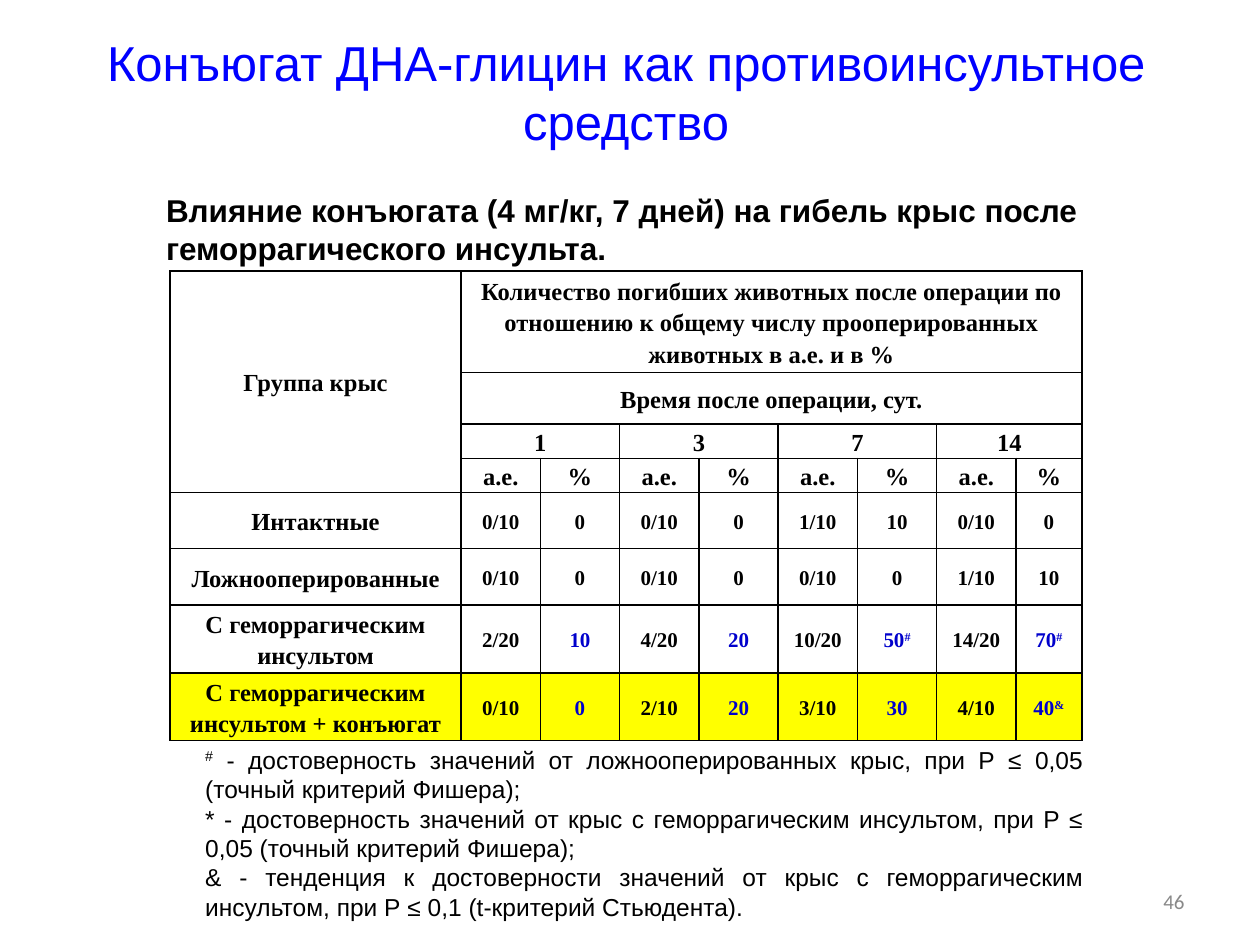
from pptx import Presentation
from pptx.util import Pt
from pptx.dml.color import RGBColor
from pptx.enum.shapes import MSO_SHAPE as Shape
from pptx.enum.text import PP_ALIGN as Align, MSO_ANCHOR as Anchor
from pptx.oxml import parse_xml
from pptx.oxml.ns import nsdecls

BLACK, BLUE, NAVY, GREY = "000000", "0000FF", "0000CC", "898989"
WHITE, YELLOW = "FFFFFF", "FFFF00"
SERIF = "Times New Roman"


def write(frame, text, size=14, font="Arial", color=BLACK, bold=False,
          align=Align.LEFT, space=None, anchor=Anchor.TOP):
    """Fill a frame, one paragraph a line; ^marks^ are superscript."""
    frame.word_wrap = True
    frame.vertical_anchor = anchor
    for i, line in enumerate(text.split("\n")):
        para = frame.add_paragraph() if i else frame.paragraphs[0]
        para.alignment = align
        if space:
            para.line_spacing = space
        for j, part in enumerate(line.split("^")):
            if not part:
                continue
            run = para.add_run()
            run.text = part
            run.font.size = Pt(size)
            run.font.name = font
            run.font.bold = bold
            run.font.color.rgb = RGBColor.from_string(color)
            if j % 2:
                run.font._element.set("baseline", "30000")


def frame_cell(cell, fill):
    """Draw thin black borders, then the fill."""
    props = cell._tc.get_or_add_tcPr()
    for side in "LRTB":
        props.append(parse_xml(
            f'<a:ln{side} {nsdecls("a")} w="12700"><a:solidFill>'
            f'<a:srgbClr val="{BLACK}"/></a:solidFill></a:ln{side}>'))
    cell.fill.solid()
    cell.fill.fore_color.rgb = RGBColor.from_string(fill)
    cell.margin_left = cell.margin_right = Pt(5)
    cell.margin_top = cell.margin_bottom = 0


deck = Presentation()
deck.slide_width, deck.slide_height = Pt(720), Pt(540)
slide = deck.slides.add_slide(deck.slide_layouts[6])
shapes = slide.shapes

# Page number and title
page = shapes.add_textbox(Pt(516), Pt(500.5), Pt(168), Pt(28.75))
write(page.text_frame, "46", size=12, font="Calibri", color=GREY,
      align=Align.RIGHT, anchor=Anchor.MIDDLE)

title = shapes.add_shape(Shape.RECTANGLE, Pt(49.5), Pt(15), Pt(616.5), Pt(75))
title.shadow.inherit = False
title.fill.solid()
title.fill.fore_color.rgb = RGBColor.from_string(WHITE)
title.line.fill.background()
write(title.text_frame, "Конъюгат ДНА-глицин как противоинсультное средство",
      size=28, color=BLUE, align=Align.CENTER)

# Table: (row, column, rows spanned, columns spanned, text)
heads = [
    (0, 0, 4, 1, "Группа крыс"),
    (0, 1, 1, 8, "Количество погибших животных после операции по отношению "
                 "к общему числу прооперированных животных в а.е. и в %"),
    (1, 1, 1, 8, "Время после операции, сут."),
]
for i, day in enumerate(["1", "3", "7", "14"]):
    col = 1 + 2 * i
    heads += [(2, col, 1, 2, day), (3, col, 1, 1, "а.е."),
              (3, col + 1, 1, 1, "%")]

groups = [
    ("Интактные", "0/10 0 0/10 0 1/10 10 0/10 0"),
    ("Ложнооперированные", "0/10 0 0/10 0 0/10 0 1/10 10"),
    ("С геморрагическим инсультом",
     "2/20 10 4/20 20 10/20 50^#^ 14/20 70^#^"),
    ("С геморрагическим инсультом + конъюгат",
     "0/10 0 2/10 20 3/10 30 4/10 40^&^"),
]
widths = [166.3] + [45.3] * 7 + [37.7]
heights = [58, 29.6, 19.5, 19.5, 32.2, 32.2, 38.8, 38.8]

grid = shapes.add_table(len(heights), len(widths), Pt(97.2), Pt(154.8),
                        Pt(sum(widths)), Pt(sum(heights))).table
for column, width in zip(grid.columns, widths):
    column.width = Pt(width)
for r, height in enumerate(heights):
    grid.rows[r].height = Pt(height)
    for cell in grid.rows[r].cells:
        frame_cell(cell, YELLOW if r == len(heights) - 1 else WHITE)

style = dict(font=SERIF, bold=True, align=Align.CENTER, space=1.15,
             anchor=Anchor.MIDDLE)
for r, c, down, across, text in heads:
    cell = grid.cell(r, c)
    if down * across > 1:
        cell.merge(grid.cell(r + down - 1, c + across - 1))
    write(cell.text_frame, text, **style)
    cell.vertical_anchor = Anchor.MIDDLE

for r, (name, values) in enumerate(groups, 4):
    for c, text in enumerate([name] + values.split()):
        cell = grid.cell(r, c)
        stroke = r >= 6 and c > 0 and c % 2 == 0
        write(cell.text_frame, text, size=12 if c else 14,
              color=NAVY if stroke else BLACK, **style)
        cell.vertical_anchor = Anchor.MIDDLE

# Footnotes and table heading
notes = shapes.add_textbox(Pt(110.2), Pt(422), Pt(516.2), Pt(109.5))
write(notes.text_frame,
      "^#^ - достоверность значений от ложнооперированных крыс, "
      "при Р ≤ 0,05 (точный критерий Фишера);\n"
      "* - достоверность значений от крыс с геморрагическим инсультом, "
      "при Р ≤ 0,05 (точный критерий Фишера);\n"
      "& - тенденция к достоверности значений от крыс с геморрагическим "
      "инсультом, при Р ≤ 0,1 (t-критерий Стьюдента).",
      align=Align.JUSTIFY)

lead = shapes.add_textbox(Pt(87.8), Pt(105.8), Pt(550), Pt(51))
write(lead.text_frame,
      "Влияние конъюгата (4 мг/кг, 7 дней) на гибель крыс после "
      "геморрагического инсульта.", size=18, bold=True)

deck.save("out.pptx")
